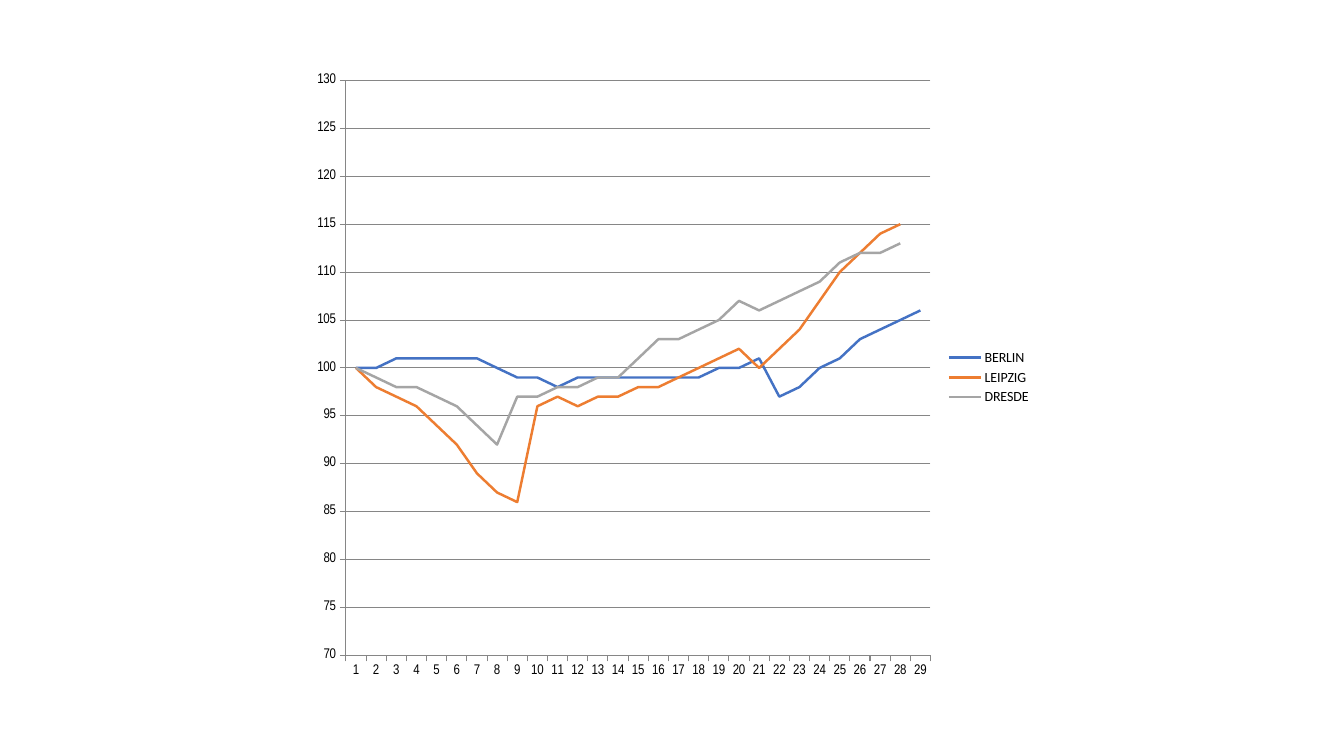
from lxml.etree import SubElement
from pptx import Presentation
from pptx.chart.data import CategoryChartData
from pptx.dml.color import RGBColor
from pptx.enum.chart import XL_CHART_TYPE, XL_LEGEND_POSITION, XL_MARKER_STYLE, XL_TICK_MARK
from pptx.oxml.ns import qn
from pptx.util import Inches, Pt

COLORS = {"text": "000000", "grid": "868686",
          "BERLIN": "4472C4", "LEIPZIG": "ED7D31", "DRESDE": "A5A5A5"}

CITIES = {
    "BERLIN": [100, 100, 101, 101, 101, 101, 101, 100, 99, 99, 98, 99, 99, 99, 99,
               99, 99, 99, 100, 100, 101, 97, 98, 100, 101, 103, 104, 105, 106],
    "LEIPZIG": [100, 98, 97, 96, 94, 92, 89, 87, 86, 96, 97, 96, 97, 97, 98,
                98, 99, 100, 101, 102, 100, 102, 104, 107, 110, 112, 114, 115, None],
    "DRESDE": [100, 99, 98, 98, 97, 96, 94, 92, 97, 97, 98, 98, 99, 99, 101,
               103, 103, 104, 105, 107, 106, 107, 108, 109, 111, 112, 112, 113, None],
}

AXIS = {"major_tick_mark": XL_TICK_MARK.OUTSIDE, "minor_tick_mark": XL_TICK_MARK.NONE}
SCALE = {"minimum_scale": 70, "maximum_scale": 130, "major_unit": 5,
         "has_major_gridlines": True}
LEGEND = {"position": XL_LEGEND_POSITION.RIGHT, "include_in_layout": False}
PLOT = {"x": 0.06, "y": 0.03, "w": 0.79, "h": 0.91}


def apply(item, values):
    for name, value in values.items():
        setattr(item, name, value)


class Painter:
    def __init__(self, slide, font="Calibri", narrow="Arial Narrow", size=10):
        self.slide, self.font, self.narrow, self.size = slide, font, narrow, size

    def type(self, font, name):
        apply(font, {"name": name, "size": Pt(self.size), "bold": False})
        font.color.rgb = RGBColor.from_string(COLORS["text"])

    def line(self, line, color, width):
        line.color.rgb = RGBColor.from_string(COLORS[color])
        line.width = Pt(width)

    def axis(self, axis, values):
        apply(axis, {**AXIS, **values})
        self.type(axis.tick_labels.font, self.narrow)
        self.line(axis.format.line, "grid", 0.75)

    def frame(self, chart):
        """Fix the inner plot area as shares of the chart."""
        area = chart.plots[0]._element.getparent()
        for old in area.findall(qn("c:layout")):
            area.remove(old)
        layout = SubElement(area, qn("c:layout"))
        area.insert(0, layout)
        manual = SubElement(layout, qn("c:manualLayout"))
        parts = {"layoutTarget": "inner", "xMode": "edge", "yMode": "edge", **PLOT}
        for tag, value in parts.items():
            SubElement(manual, qn("c:" + tag)).set("val", str(value))

    def chart(self, left, top, width, height, series):
        data = CategoryChartData(number_format="0")
        count = max(len(values) for values in series.values())
        data.categories = [str(n) for n in range(1, count + 1)]
        for name, values in series.items():
            data.add_series(name, values)
        box = map(Inches, (left, top, width, height))
        chart = self.slide.shapes.add_chart(XL_CHART_TYPE.LINE, *box, data).chart
        apply(chart, {"has_title": False, "has_legend": True})
        self.type(chart.font, self.font)
        apply(chart.legend, LEGEND)
        self.type(chart.legend.font, self.font)
        self.axis(chart.category_axis, {"has_major_gridlines": False})
        self.axis(chart.value_axis, SCALE)
        apply(chart.value_axis.tick_labels,
              {"number_format": "0", "number_format_is_linked": False})
        self.line(chart.value_axis.major_gridlines.format.line, "grid", 0.75)
        chart.plots[0].vary_by_categories = False
        for city in chart.plots[0].series:
            city.smooth = False
            city.marker.style = XL_MARKER_STYLE.NONE
            self.line(city.format.line, city.name, 1.75)
        self.frame(chart)


def main():
    deck = Presentation()
    apply(deck, {"slide_width": Inches(13.33), "slide_height": Inches(7.5)})
    page = Painter(deck.slides.add_slide(deck.slide_layouts[6]))
    page.chart(2.99, 0.61, 7.34, 6.27, CITIES)
    deck.save("out.pptx")


if __name__ == "__main__":
    main()
